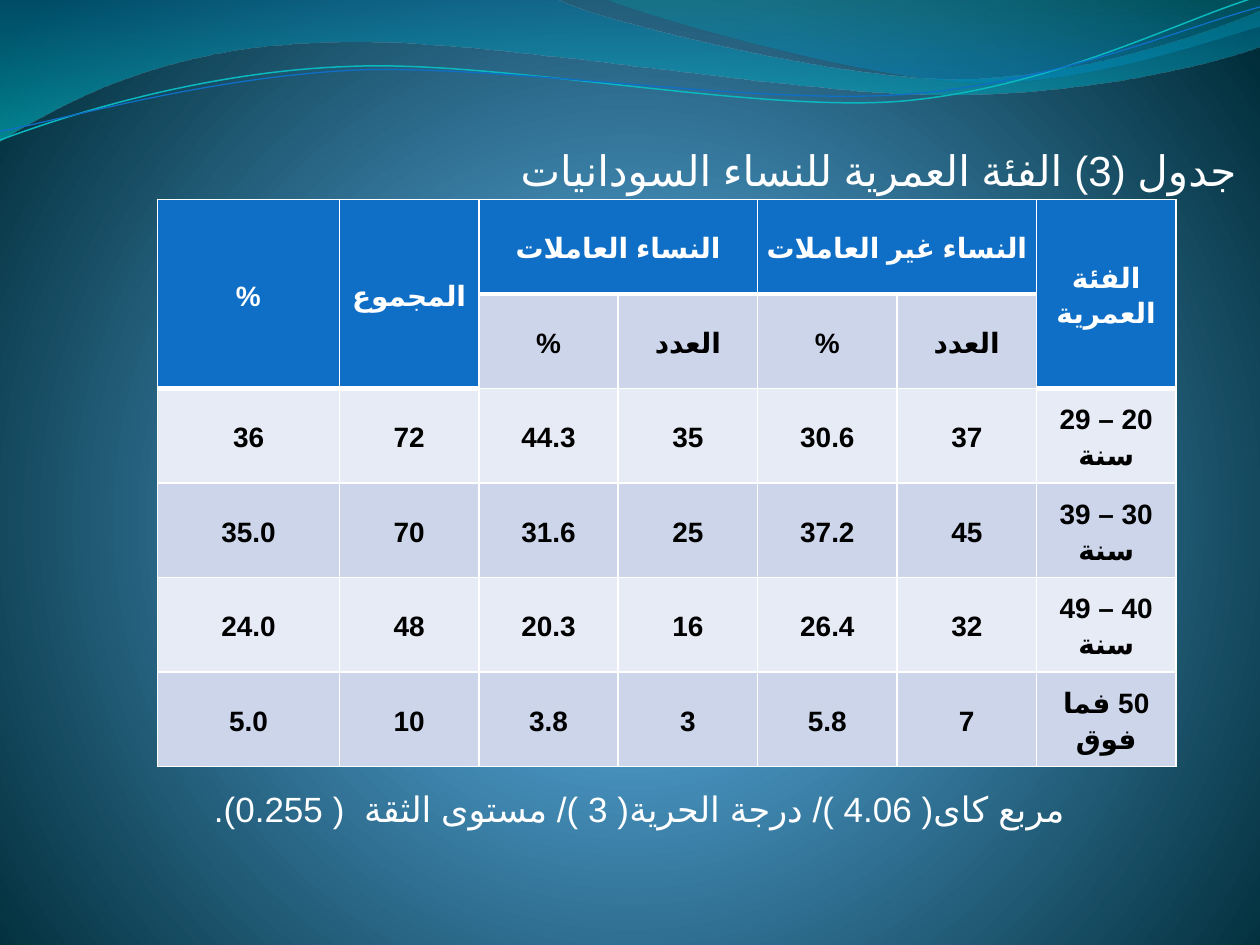
from lxml import etree
from pptx import Presentation
from pptx.dml.color import RGBColor
from pptx.enum.lang import MSO_LANGUAGE_ID
from pptx.enum.text import MSO_ANCHOR, PP_ALIGN
from pptx.oxml.ns import nsdecls, qn
from pptx.util import Pt

CENTER, RIGHT = PP_ALIGN.CENTER, PP_ALIGN.RIGHT
MIDDLE = MSO_ANCHOR.MIDDLE
ARABIC = MSO_LANGUAGE_ID.ARABIC

WHITE = RGBColor(0xFF, 0xFF, 0xFF)
BLACK = RGBColor(0, 0, 0)
BLUE = RGBColor(0x0F, 0x6F, 0xC6)
TEAL = RGBColor(0x0A, 0xB8, 0xBF)
BAND_DARK = RGBColor(0xCC, 0xD5, 0xEA)
BAND_LIGHT = RGBColor(0xE7, 0xEB, 0xF5)
SKY = RGBColor(0x4A, 0xA0, 0xD6)
SKY_MID = RGBColor(0x4C, 0x98, 0xC7)
NIGHT = RGBColor(0x00, 0x2C, 0x38)
WAVE_BLUE = RGBColor(0x00, 0x74, 0xA1)
WAVE_CYAN = RGBColor(0x00, 0xC6, 0xCF)
CREST_GREEN = RGBColor(0x00, 0xA1, 0xA9)
CREST_BLUE = RGBColor(0x00, 0x8B, 0xBF)

DOWNWARD = '<a:lin ang="5400000" scaled="1"/>'
GLOW = ('<a:path path="circle"><a:fillToRect l="10000" t="110000" '
        'r="10000" b="100000"/></a:path>')

# Outlines in slide points: a pair is a corner, six numbers are a Bezier curve.
WAVE = [(0, 0), (317, -1), (343, 12, 478, 45, 546, 45),
        (614, 45, 690, 19, 720, 6.5), (721, 26),
        (708, 32, 626, 55, 537, 54), (448, 54, 275, 20, 185, 24.5),
        (93, 26, 33, 60, -1, 81)]
CREST = [(345, -1), (366, 8, 491, 45, 554, 47),
         (616, 50, 692, 23, 720, 15), (720, 0)]
TEAL_LINE = [(0, 80), (35, 67, 114, 41, 199, 37.5),
             (284, 34, 427, 64, 513, 57.5), (600, 51, 675, 11, 719, -1.5)]
BLUE_LINE = [(0, 75), (34, 69, 118, 44, 204, 40),
             (290, 37, 430, 60.5, 516, 54), (602, 48, 678, 15, 720, 4)]

HEADER_MERGES = {(0, 0): (1, 0), (0, 1): (1, 1), (0, 2): (0, 3),
                 (0, 4): (0, 5), (0, 6): (1, 6)}
ROWS = [
    ["%", "المجموع", "النساء العاملات", "", "النساء غير العاملات", "",
     "الفئة العمرية"],
    ["", "", "%", "العدد", "%", "العدد", ""],
    ["36", "72", "44.3", "35", "30.6", "37", "20 – 29 سنة"],
    ["35.0", "70", "31.6", "25", "37.2", "45", "30 – 39 سنة"],
    ["24.0", "48", "20.3", "16", "26.4", "32", "40 – 49 سنة"],
    ["5.0", "10", "3.8", "3", "5.8", "7", "50 فما فوق"],
]


def set_gradient(fill, element, stops, direction):
    """Fill with (position %, colour, opacity %) stops."""
    fill.gradient()
    grad = next(element.iter(qn("a:gradFill")))
    gs = "".join(
        f'<a:gs pos="{pos * 1000}"><a:srgbClr val="{color}">'
        f'<a:alpha val="{alpha * 1000}"/></a:srgbClr></a:gs>'
        for pos, color, alpha in stops)
    new = etree.fromstring(f'<a:gradFill {nsdecls("a")} rotWithShape="1">'
                           f'<a:gsLst>{gs}</a:gsLst>{direction}</a:gradFill>')
    grad[:] = list(new)


def add_outline(slide, outline, close):
    """Draw all points as a polygon, then join each curve's three points."""
    points = [seg[i:i + 2] for seg in outline for i in range(0, len(seg), 2)]
    builder = slide.shapes.build_freeform(*points[0], scale=Pt(1))
    builder.add_line_segments(points[1:], close=close)
    sp = builder.convert_to_shape()
    sp.shadow.inherit = False
    lines = iter(list(sp._element.iter(qn("a:lnTo"))))
    for seg in outline[1:]:
        line = next(lines)
        if len(seg) == 6:
            curve = etree.Element(qn("a:cubicBezTo"))
            line.addprevious(curve)
            for part in (line, next(lines), next(lines)):
                curve.append(part[0])
                part.getparent().remove(part)
    return sp


def add_waves(slide):
    areas = [(WAVE, [(0, WAVE_BLUE, 45), (100, WAVE_CYAN, 55)]),
             (CREST, [(0, CREST_GREEN, 30), (80, CREST_BLUE, 45)])]
    for outline, stops in areas:
        sp = add_outline(slide, outline, True)
        set_gradient(sp.fill, sp._element, stops, DOWNWARD)
        sp.line.fill.background()
    for outline, color, width in [(TEAL_LINE, TEAL, 0.85),
                                  (BLUE_LINE, BLUE, 0.75)]:
        sp = add_outline(slide, outline, False)
        sp.fill.background()
        sp.line.color.rgb = color
        sp.line.width = Pt(width)


def write_rtl(tf, text, size, color, align, font, bold=False):
    tf.word_wrap = True
    tf.vertical_anchor = MIDDLE
    p = tf.paragraphs[0]
    p.alignment = align
    p._p.get_or_add_pPr().set("rtl", "1")
    r = p.add_run()
    r.text = text
    r.font.size = Pt(size)
    r.font.name = font
    r.font.bold = bold
    r.font.color.rgb = color
    r.font.language_id = ARABIC
    etree.SubElement(r._r.get_or_add_rPr(), qn("a:cs"), typeface="Arial")
    return p


def place_text(sp, box, text, size, align):
    sp.left, sp.top, sp.width, sp.height = map(Pt, box)
    tf = sp.text_frame
    tf.margin_left, tf.margin_right = 0, Pt(1.5)
    write_rtl(tf, text, size, WHITE, align, "Vollkorn")


def set_borders(cell, widths):
    tc_pr = cell._tc.get_or_add_tcPr()
    for i, (side, width) in enumerate(widths.items()):
        tc_pr.insert(i, etree.fromstring(
            f'<a:ln{side} {nsdecls("a")} w="{Pt(width)}"><a:solidFill>'
            f'<a:srgbClr val="{WHITE}"/></a:solidFill></a:ln{side}>'))


def add_age_table(slide, left, top, width, height):
    n_rows, n_cols = len(ROWS), len(ROWS[0])
    table = slide.shapes.add_table(n_rows, n_cols, Pt(left), Pt(top),
                                   Pt(width), Pt(height)).table
    first_width = 104
    for c, col in enumerate(table.columns):
        col.width = Pt(first_width if c == 0
                       else (width - first_width) / (n_cols - 1))
    for start, end in HEADER_MERGES.items():
        table.cell(*start).merge(table.cell(*end))
    for r, row in enumerate(ROWS):
        for c, text in enumerate(row):
            cell = table.cell(r, c)
            header = r == 0 or (r == 1 and not text)
            cell.fill.solid()
            cell.fill.fore_color.rgb = (BLUE if header else
                                        BAND_DARK if r % 2 else BAND_LIGHT)
            widths = {"L": 1, "R": 1, "T": 1, "B": 3 if header else 1}
            if r > 0:
                del widths["T"]
            set_borders(cell, widths)
            cell.margin_left = cell.margin_right = Pt(5)
            cell.margin_top = cell.margin_bottom = 0
            cell.vertical_anchor = MIDDLE
            if text:
                p = write_rtl(cell.text_frame, text, 16,
                              WHITE if header else BLACK, CENTER, "Calibri", True)
                p.line_spacing = 1.15
                p.space_after = Pt(10)


def main():
    prs = Presentation()
    prs.slide_width, prs.slide_height = Pt(720), Pt(540)
    slide = prs.slides.add_slide(prs.slide_layouts[5])
    set_gradient(slide.background.fill, slide._element,
                 [(0, SKY, 100), (25, SKY_MID, 100), (100, NIGHT, 100)], GLOW)
    add_waves(slide)
    place_text(slide.shapes.title, (24, 79, 684, 36),
               "جدول (3) الفئة العمرية للنساء السودانيات", 24, RIGHT)
    add_age_table(slide, 90, 114, 582, 324)
    place_text(slide.shapes.add_textbox(0, 0, 0, 0), (24, 444, 684, 36),
               "مربع كاى( 4.06 )/ درجة الحرية( 3 )/ مستوى الثقة  ( 0.255).",
               20, CENTER)
    prs.save("out.pptx")


if __name__ == "__main__":
    main()
